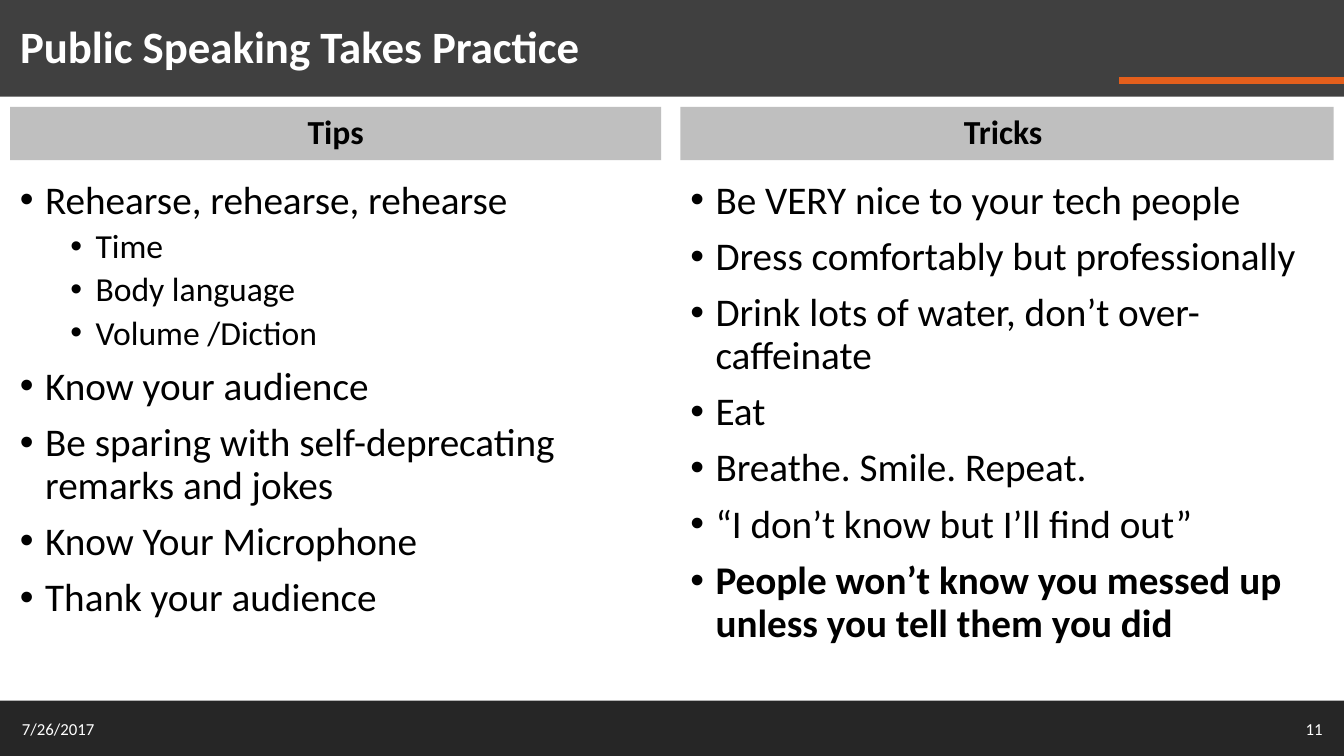
from lxml.etree import SubElement
from pptx import Presentation
from pptx.dml.color import RGBColor
from pptx.enum.shapes import MSO_CONNECTOR, MSO_SHAPE
from pptx.enum.text import MSO_ANCHOR, PP_ALIGN
from pptx.oxml.ns import qn
from pptx.util import Pt

COLORS = {
    "header": "404040",
    "footer": "262626",
    "accent": "E45F1C",
    "heading": "BFBFBF",
    "light": "FFFFFF",
    "dark": "000000",
}
WIDTH, HEIGHT = 960, 540
MARGIN = 7.2

# Each bullet: level, text, bold
TIPS = [
    (0, "Rehearse, rehearse, rehearse", False),
    (1, "Time", False),
    (1, "Body language", False),
    (1, "Volume /Diction", False),
    (0, "Know your audience", False),
    (0, "Be sparing with self-deprecating remarks and jokes", False),
    (0, "Know Your Microphone", False),
    (0, "Thank your audience", False),
]
TRICKS = [
    (0, "Be VERY nice to your tech people", False),
    (0, "Dress comfortably but professionally", False),
    (0, "Drink lots of water, don’t over-caffeinate", False),
    (0, "Eat", False),
    (0, "Breathe. Smile. Repeat.", False),
    (0, "“I don’t know but I’ll find out”", False),
    (0, "People won’t know you messed up unless you tell them you did", True),
]
COLUMNS = [("Tips", TIPS, MARGIN, 465.12), ("Tricks ", TRICKS, 486, 466.56)]


class SlideBuilder:
    FONT = "Calibri"
    LEVELS = [
        {"size": 28, "before": 10, "left": 18},
        {"size": 24, "before": 5, "left": 54},
    ]
    HANGING = 18

    def __init__(self, slide):
        self.shapes = slide.shapes

    def color(self, name):
        return RGBColor.from_string(COLORS[name])

    def band(self, left, top, width, height, fill):
        band = self.shapes.add_shape(
            MSO_SHAPE.RECTANGLE, Pt(left), Pt(top), Pt(width), Pt(height))
        band.shadow.inherit = False
        band.fill.solid()
        band.fill.fore_color.rgb = self.color(fill)
        band.line.fill.background()
        return band

    def rule(self, left, right, y, color, weight):
        rule = self.shapes.add_connector(
            MSO_CONNECTOR.STRAIGHT, Pt(left), Pt(y), Pt(right), Pt(y))
        rule.line.color.rgb = self.color(color)
        rule.line.width = Pt(weight)
        SubElement(rule._element.spPr, qn("a:effectLst"))

    def frame(self, left, top, width, height, anchor=MSO_ANCHOR.MIDDLE):
        box = self.shapes.add_textbox(Pt(left), Pt(top), Pt(width), Pt(height))
        box.text_frame.word_wrap = True
        box.text_frame.vertical_anchor = anchor
        return box.text_frame

    def add_text(self, paragraph, text, size, color="dark", bold=False, **layout):
        for name, value in layout.items():
            setattr(paragraph, name, value)
        run = paragraph.add_run()
        run.text = text
        style = {"name": self.FONT, "size": Pt(size), "bold": bold}
        for name, value in style.items():
            setattr(run.font, name, value)
        run.font.color.rgb = self.color(color)

    def label(self, text, left, top, width, height, size, **style):
        frame = self.frame(left, top, width, height)
        self.add_text(frame.paragraphs[0], text, size, "light", **style)

    def heading(self, text, left, top, width, height):
        frame = self.band(left, top, width, height, "heading").text_frame
        frame.word_wrap = True
        frame.vertical_anchor = MSO_ANCHOR.MIDDLE
        self.add_text(frame.paragraphs[0], text, 24, bold=True,
                      alignment=PP_ALIGN.CENTER, line_spacing=0.9)

    def bullets(self, items, left, top, width, height):
        frame = self.frame(left, top, width, height, MSO_ANCHOR.TOP)
        for index, (level, text, bold) in enumerate(items):
            item = frame.add_paragraph() if index else frame.paragraphs[0]
            look = self.LEVELS[level]
            properties = item._p.get_or_add_pPr()
            properties.set("marL", str(Pt(look["left"])))
            properties.set("indent", str(-Pt(self.HANGING)))
            SubElement(properties, qn("a:buFont"), typeface="Arial")
            SubElement(properties, qn("a:buChar"), char="•")
            self.add_text(item, text, look["size"], bold=bold, level=level,
                          line_spacing=0.9,
                          space_before=Pt(look["before"] if index else 0))


def main():
    deck = Presentation()
    deck.slide_width, deck.slide_height = Pt(WIDTH), Pt(HEIGHT)
    page = SlideBuilder(deck.slides.add_slide(deck.slide_layouts[6]))

    # Footer and header bands
    page.band(0, 500.4, WIDTH, 39.6, "footer")
    page.band(0, 0, WIDTH, 69.12, "header")
    page.rule(799.2, WIDTH, 57.6, "accent", 5)
    page.label("Public Speaking Takes Practice", MARGIN, 5.04, 783.36, 60.48,
               32, bold=True, line_spacing=0.9)

    # Two columns of advice
    for heading, advice, left, width in COLUMNS:
        page.heading(heading, left, 76.32, width, 38.16)
        page.bullets(advice, left, 125.28, width, 362.16)

    # Date and page number
    page.label("7/26/2017", 8.64, 506.16, 216, 28.8, 12)
    page.label("11", 735.84, 506.16, 216, 28.8, 12, alignment=PP_ALIGN.RIGHT)

    deck.save("out.pptx")


if __name__ == "__main__":
    main()
